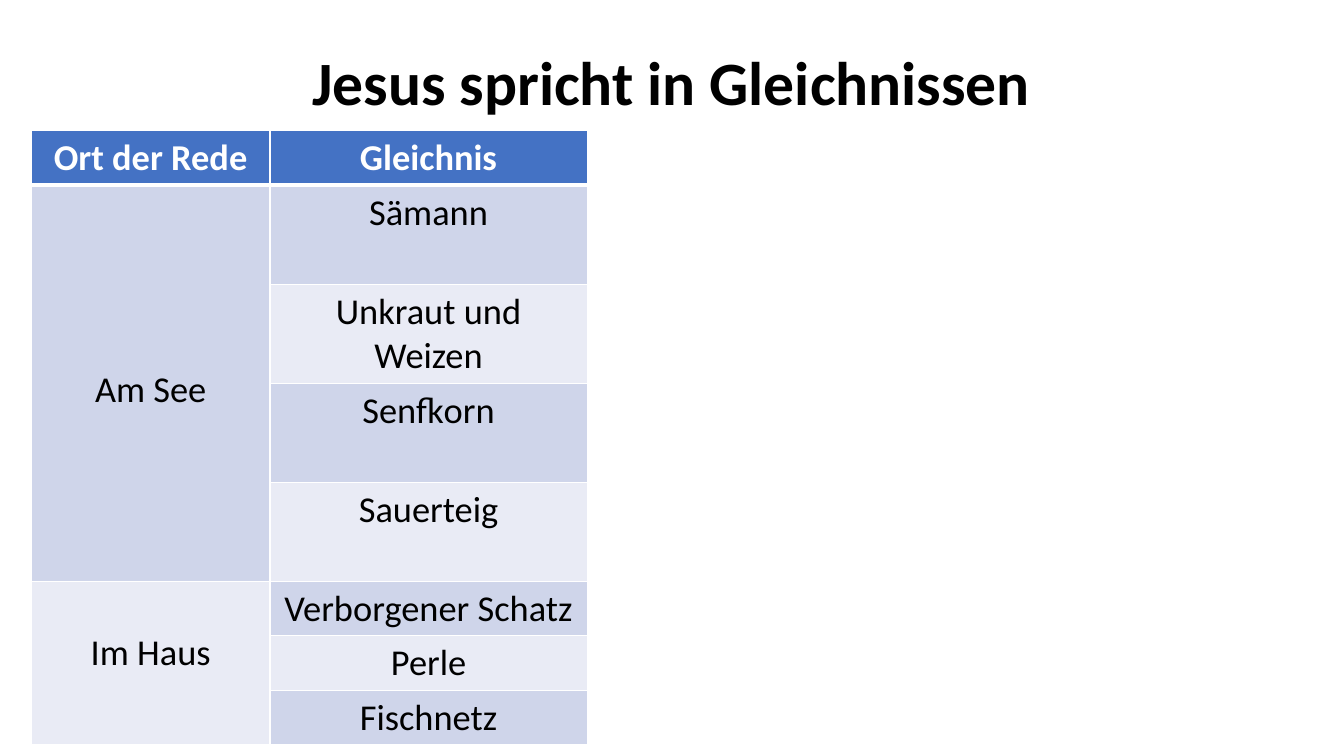
import pptx
import pptx.util
import pptx.dml.color
import pptx.enum.text
import pptx.oxml.ns
import lxml.etree

Pt = pptx.util.Pt
MIDDLE = pptx.enum.text.MSO_ANCHOR.MIDDLE
TITLE = "Jesus spricht in Gleichnissen"
HEADS = ["Ort der Rede", "Gleichnis"]
LINE = 31.7
# place, row height, lines of space above the place name, parables
GROUPS = [
    ("Am See", 70.75, 4, ["Sämann", "Unkraut und Weizen", "Senfkorn", "Sauerteig"]),
    ("Im Haus", 39, 1, ["Verborgener Schatz", "Perle", "Fischnetz"]),
]
COLORS = {"head": "4472C4", "dark": "CFD5EA", "light": "E9EBF5",
          "white": "FFFFFF", "black": "000000"}
FONT = "Calibri"
WIDTHS = [170.4, 226.6]
LEFT, TOP, HEAD = 22.5, 93.4, 38.9


def style(frame, size, color, bold):
    para = frame.paragraphs[0]
    para.alignment = pptx.enum.text.PP_ALIGN.CENTER
    font = para.runs[0].font
    font.name, font.size, font.bold = FONT, Pt(size), bold
    font.color.rgb = pptx.dml.color.RGBColor.from_string(COLORS[color])


def paint(cell, fill, base=1, top=1):
    """Set white borders, then the fill, in the order the schema asks for."""
    props = cell._tc.get_or_add_tcPr()
    for side, width in [("L", 1), ("R", 1), ("T", top), ("B", base)]:
        line = lxml.etree.SubElement(props, pptx.oxml.ns.qn(f"a:ln{side}"),
                                     w=str(Pt(width)))
        solid = lxml.etree.SubElement(line, pptx.oxml.ns.qn("a:solidFill"))
        lxml.etree.SubElement(solid, pptx.oxml.ns.qn("a:srgbClr"),
                              val=COLORS["white"])
    cell.fill.solid()
    cell.fill.fore_color.rgb = pptx.dml.color.RGBColor.from_string(COLORS[fill])


def write(cell, text, color="black", bold=False):
    cell.text_frame.text = text
    style(cell.text_frame, 26, color, bold)


def main():
    deck = pptx.Presentation()
    deck.slide_width, deck.slide_height = Pt(960), Pt(540)
    slide = deck.slides.add_slide(deck.slide_layouts[6])

    box = slide.shapes.add_textbox(Pt(66), Pt(28.8), Pt(828), Pt(64))
    frame = box.text_frame
    frame.word_wrap = True
    frame.vertical_anchor = MIDDLE
    frame.text = TITLE
    frame.paragraphs[0].line_spacing = 0.9
    style(frame, 44, "black", True)

    heights = [HEAD] + [high for _, high, _, names in GROUPS for _ in names]
    table = slide.shapes.add_table(len(heights), len(WIDTHS), Pt(LEFT), Pt(TOP),
                                   Pt(sum(WIDTHS)), Pt(sum(heights))).table
    for col, width in zip(table.columns, WIDTHS):
        col.width = Pt(width)
    for row, high in zip(table.rows, heights):
        row.height = Pt(high)

    for col, head in enumerate(HEADS):
        cell = table.cell(0, col)
        write(cell, head, "white", True)
        paint(cell, "head", base=3)

    start = 1
    for index, (place, _, above, names) in enumerate(GROUPS):
        shade = ["dark", "light"][index % 2]
        for row, name in enumerate(names, start):
            top = 3 if row == 1 else 1
            paint(table.cell(row, 0), shade, top=top)
            paint(table.cell(row, 1), "dark" if row % 2 else "light", top=top)
            write(table.cell(row, 1), name)
        cell = table.cell(start, 0)
        cell.merge(table.cell(start + len(names) - 1, 0))
        write(cell, place)
        cell.margin_top = Pt(3.6 + above * LINE)
        start += len(names)

    deck.save("out.pptx")


if __name__ == "__main__":
    main()
